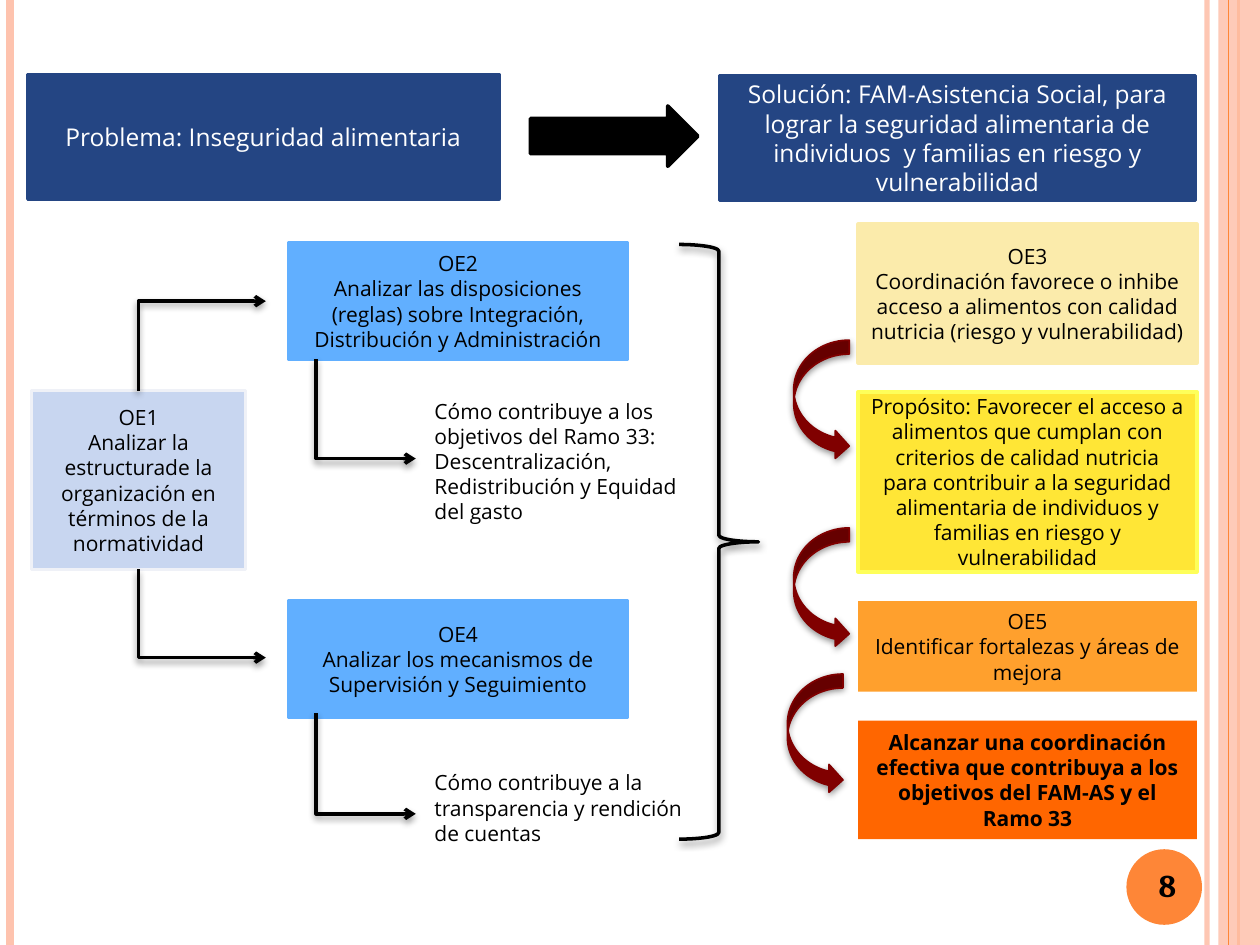
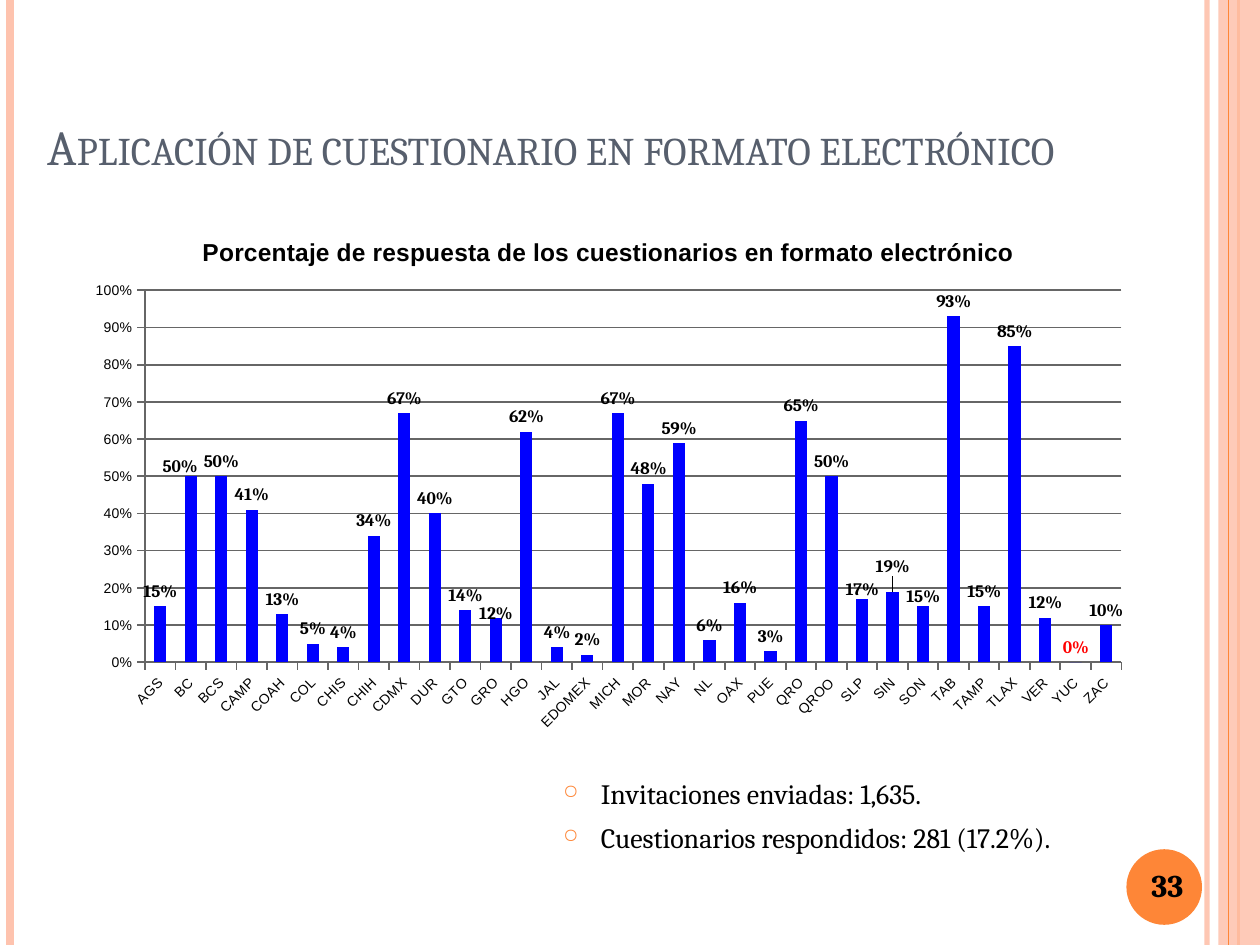
from lxml import etree
from pptx import Presentation
from pptx.chart.data import CategoryChartData
from pptx.dml.color import RGBColor
from pptx.enum.chart import XL_CHART_TYPE, XL_LABEL_POSITION, XL_TICK_MARK
from pptx.enum.shapes import MSO_CONNECTOR, MSO_SHAPE
from pptx.enum.text import MSO_ANCHOR, PP_ALIGN
from pptx.oxml.ns import qn
from pptx.util import Emu, Inches, Pt

RECT, OVAL = MSO_SHAPE.RECTANGLE, MSO_SHAPE.OVAL
STRAIGHT, ELBOW = MSO_CONNECTOR.STRAIGHT, MSO_CONNECTOR.ELBOW
LEFT, CENTER = PP_ALIGN.LEFT, PP_ALIGN.CENTER
TOP, MIDDLE, BOTTOM = MSO_ANCHOR.TOP, MSO_ANCHOR.MIDDLE, MSO_ANCHOR.BOTTOM
OUTSIDE_END = XL_LABEL_POSITION.OUTSIDE_END
TITLE_ONLY, BLANK = 5, 6

COLORS = {
    "black": "000000", "white": "FFFFFF", "orange": "FE8637", "peach": "FEC3AE",
    "slate": "575F6D", "navy": "244583", "sky": "61AFFF", "pale_blue": "C8D6F0",
    "ice": "EFF1F7", "cream": "FBEBAB", "yellow": "FFE636", "lemon": "FEFF5A",
    "amber": "FFA02D", "deep_orange": "FF6600", "maroon": "800000",
    "blue": "0000FF", "red": "FF0000", "grid": "666666",
}
SERIF, SANS, CHART_SANS = "Cambria", "Open Sans", "Arial"

STRIPES = [(9.58, "peach", 3, 93), (0.08, "peach", 4.5, 100), (9.83, "orange", 1.5, 100)]
INNER_STRIPE = (9.75, "orange", 0.75, 100)
SIDE_BAND = (9.67, 0, 0.33, 7.5)
NUMBER_DISC = (8.94, 6.74, 0.6, 0.6)

HEADERS = [
    ((5.71, 0.6, 3.78, 0.99),
     "Solución: FAM-Asistencia Social, para lograr la seguridad alimentaria de "
     "individuos  y familias en riesgo y vulnerabilidad"),
    ((0.22, 0.59, 3.74, 0.99), "Problema: Inseguridad alimentaria"),
]
SOLUTION_ARROW = (4.21, 0.84, 1.33, 0.48)

OBJECTIVES = [
    ((0.25, 3.1, 1.7, 1.42), "pale_blue", "ice",
     ["OE1", "Analizar la estructurade la", "organización en términos de la normatividad"]),
    ((2.29, 1.93, 2.69, 0.92), "sky", "sky",
     ["OE2", "Analizar las disposiciones (reglas) sobre Integración, "
             "Distribución y Administración"]),
    ((2.29, 4.77, 2.69, 0.92), "sky", "sky",
     ["OE4", "Analizar los mecanismos de Supervisión y Seguimiento"]),
]
CONTRIBUTIONS = [
    ((3.35, 3.12, 2.13, 1.08),
     "Cómo contribuye a los objetivos del Ramo 33: Descentralización, "
     "Redistribución y Equidad del gasto"),
    ((3.35, 5.95, 2.24, 0.92), "Cómo contribuye a la transparencia y rendición de cuentas"),
]
OUTCOME_LEFT, OUTCOME_WIDTH = 6.81, 2.69
OUTCOMES = [
    (1.78, 1.1, "cream", "cream", False,
     ["OE3", "Coordinación favorece o inhibe acceso a alimentos con calidad nutricia "
             "(riesgo y vulnerabilidad)"]),
    (3.11, 1.43, "yellow", "lemon", False,
     ["Propósito: Favorecer el acceso a alimentos que cumplan con criterios de calidad "
      "nutricia para contribuir a la seguridad alimentaria de individuos y familias en "
      "riesgo y vulnerabilidad"]),
    (4.77, 0.72, "amber", None, False, ["OE5", "Identificar fortalezas y áreas de mejora"]),
    (5.72, 0.94, "deep_orange", None, True,
     ["Alcanzar una coordinación efectiva que contribuya a los objetivos del FAM-AS y el "
      "Ramo 33"]),
]
ELBOWS = [
    ((1.1, 3.1), (2.11, 2.39)), ((1.1, 4.52), (2.11, 5.22)),
    ((2.51, 2.85), (3.3, 3.64)), ((2.51, 5.66), (3.3, 6.46)),
]
CURVED_ARROWS = [(6.3, 2.7), (6.3, 4.19), (6.25, 5.35)]
BRACE = (5.39, 1.94, 0.63, 4.72)

SURVEY_TITLE = "Aplicación de cuestionario en formato electrónico"
SURVEY_TOTALS = ["Invitaciones enviadas: 1,635.", "Cuestionarios respondidos: 281 (17.2%)."]
RESPONSE_TITLE = "Porcentaje de respuesta de los cuestionarios en formato electrónico"
RESPONSE_RATES = {
    "AGS": 0.15, "BC": 0.5, "BCS": 0.5, "CAMP": 0.41, "COAH": 0.13, "COL": 0.05,
    "CHIS": 0.04, "CHIH": 0.34, "CDMX": 0.67, "DUR": 0.4, "GTO": 0.14, "GRO": 0.12,
    "HGO": 0.62, "JAL": 0.04, "EDOMEX": 0.02, "MICH": 0.67, "MOR": 0.48, "NAY": 0.59,
    "NL": 0.06, "OAX": 0.16, "PUE": 0.03, "QRO": 0.65, "QROO": 0.5, "SLP": 0.17,
    "SIN": 0.19, "SON": 0.15, "TAB": 0.93, "TAMP": 0.15, "TLAX": 0.85, "VER": 0.12,
    "YUC": 0, "ZAC": 0.1,
}
LABEL_SHIFTS = {"BC": (-0.01, 0.01), "GRO": (0, 0.02), "SLP": (0, 0.01),
                "SIN": (0, -0.02), "SON": (0, 0.01)}
PLOT_AREA = {"x": 0.066, "y": 0.145, "w": 0.914, "h": 0.708}


def rgb(name):
    return RGBColor.from_string(COLORS[name])


def inches(values):
    return [Inches(value) for value in values]


def child(parent, tag, **attributes):
    return etree.SubElement(parent, qn(tag), {k: str(v) for k, v in attributes.items()})


def set_alpha(fill_parent, percent):
    if percent < 100:
        color = next(fill_parent.iter(qn("a:srgbClr")))
        child(color, "a:alpha", val=percent * 1000)


def set_effect(shape, opacity=None, blur=4, distance=2):
    properties = shape._element.spPr
    for old in properties.findall(qn("a:effectLst")):
        properties.remove(old)
    effects = child(properties, "a:effectLst")
    if opacity:
        shadow = child(effects, "a:outerShdw", blurRad=Pt(blur), dist=Pt(distance),
                       dir=90 * 60000, rotWithShape=0)
        child(child(shadow, "a:srgbClr", val=COLORS["black"]), "a:alpha", val=opacity * 1000)


def style_font(font, size, name, color="black", bold=False):
    font.size, font.name, font.bold = Pt(size), name, bold
    font.color.rgb = rgb(color)


def write(shape, texts, size, name, color="black", bold=False, align=CENTER, anchor=MIDDLE):
    frame = shape.text_frame
    frame.word_wrap = True
    frame.vertical_anchor = anchor
    frame.text = "\n".join(texts)
    for paragraph in frame.paragraphs:
        paragraph.alignment = align
        style_font(paragraph.font, size, name, color, bold)


def add_shape(slide, preset, box, fill=None, line=None, width=2.0):
    shape = slide.shapes.add_shape(preset, *inches(box))
    shape.shadow.inherit = False
    if fill:
        shape.fill.solid()
        shape.fill.fore_color.rgb = rgb(fill)
    else:
        shape.fill.background()
    if line:
        shape.line.color.rgb = rgb(line)
        shape.line.width = Pt(width)
    else:
        shape.line.fill.background()
    return shape


def add_line(slide, kind, start, end, color, width):
    line = slide.shapes.add_connector(kind, *inches(start + end))
    line.line.color.rgb = rgb(color)
    line.line.width = Pt(width)
    set_effect(line)
    return line


def add_stripe(slide, x, color, width, opacity):
    stripe = add_line(slide, STRAIGHT, (x, 0), (x, 7.5), color, width)
    set_alpha(stripe._element.spPr, opacity)


def add_frame(slide):
    add_shape(slide, OVAL, NUMBER_DISC, "orange")
    for stripe in STRIPES:
        add_stripe(slide, *stripe)
    band = add_shape(slide, RECT, SIDE_BAND, "peach")
    set_alpha(band._element.spPr, 87)
    add_stripe(slide, *INNER_STRIPE)


def add_number(slide, number):
    box = slide.shapes.add_textbox(*inches((8.94, 6.74, 0.65, 0.56)))
    write(box, [str(number)], 18, SERIF, bold=True)


def add_elbow(slide, source, target):
    elbow = add_line(slide, ELBOW, target, source, "black", 2)
    elbow._element.spPr.find(qn("a:prstGeom")).set("prst", "bentConnector2")
    child(elbow.line._get_or_add_ln(), "a:headEnd", type="arrow")
    set_effect(elbow, 40)


def build_objectives(slide):
    add_frame(slide)
    for box, text in HEADERS:
        write(add_shape(slide, RECT, box, "navy", "navy"), [text], 14, SANS, "white")
    arrow = add_shape(slide, MSO_SHAPE.RIGHT_ARROW, SOLUTION_ARROW, "black", "black")
    arrow.adjustments[0] = 0.58
    for box, fill, line, texts in OBJECTIVES:
        write(add_shape(slide, RECT, box, fill, line), texts, 12, SANS)
    for box, text in CONTRIBUTIONS:
        write(slide.shapes.add_textbox(*inches(box)), [text], 12, SANS, align=LEFT)
    for top, height, fill, line, bold, texts in OUTCOMES:
        box = (OUTCOME_LEFT, top, OUTCOME_WIDTH, height)
        write(add_shape(slide, RECT, box, fill, line), texts, 12, SANS, bold=bold)
    for source, target in ELBOWS:
        add_elbow(slide, source, target)
    for left, top in CURVED_ARROWS:
        curve = add_shape(slide, MSO_SHAPE.CURVED_RIGHT_ARROW, (left, top, 0.44, 0.95),
                          "maroon", "maroon", 1)
        set_effect(curve, 42, distance=1.6)
    add_number(slide, 8)
    set_effect(add_shape(slide, MSO_SHAPE.RIGHT_BRACE, BRACE, line="black"), 40)


def add_layout(layout, **places):
    manual = child(layout, "c:manualLayout")
    if "w" in places:
        child(manual, "c:layoutTarget", val="inner")
        for axis in "xy":
            child(manual, f"c:{axis}Mode", val="edge")
    for key, value in places.items():
        child(manual, f"c:{key}", val=value)


def style_axis(axis):
    axis.major_tick_mark = XL_TICK_MARK.OUTSIDE
    style_font(axis.tick_labels.font, 8, CHART_SANS)
    axis.format.line.color.rgb = rgb("grid")
    axis.format.line.width = Pt(1)


def add_response_chart(slide):
    data = CategoryChartData(number_format="0%")
    data.categories = list(RESPONSE_RATES)
    data.add_series("Series 1", list(RESPONSE_RATES.values()))
    chart = slide.shapes.add_chart(XL_CHART_TYPE.COLUMN_CLUSTERED,
                                   *inches((0.59, 1.7, 8.48, 4.17)), data).chart
    style_font(chart.font, 10, SERIF)
    chart.has_legend = False
    chart.has_title = True
    heading = chart.chart_title.text_frame
    heading.text = RESPONSE_TITLE
    style_font(heading.paragraphs[0].font, 14, CHART_SANS, bold=True)

    states, rates = chart.category_axis, chart.value_axis
    for axis in (states, rates):
        style_axis(axis)
    states._element.find(qn("c:txPr")).find(qn("a:bodyPr")).set("rot", str(-45 * 60000))
    rates.minimum_scale, rates.maximum_scale, rates.major_unit = 0, 1, 0.1
    rates.tick_labels.number_format = "0%"
    rates.tick_labels.number_format_is_linked = False
    rates.major_gridlines.format.line.color.rgb = rgb("grid")
    rates.major_gridlines.format.line.width = Pt(1)

    plot = chart.plots[0]
    plot.gap_width, plot.vary_by_categories = 150, False
    series = plot.series[0]
    series.format.fill.solid()
    series.format.fill.fore_color.rgb = rgb("blue")
    labels = series.data_labels
    labels.show_value = True
    labels.number_format, labels.number_format_is_linked = "0%", False
    labels.position = OUTSIDE_END
    style_font(labels.font, 10, SERIF, bold=True)
    order = list(RESPONSE_RATES)
    for state in [*LABEL_SHIFTS, "YUC"]:
        index = order.index(state)
        label = series.points[index].data_label
        style_font(label.font, 10, SERIF, "red" if state == "YUC" else "black", True)
        label.position = OUTSIDE_END
        if state in LABEL_SHIFTS:
            x, y = LABEL_SHIFTS[state]
            element = next(e for e in labels._element.findall(qn("c:dLbl"))
                           if e.find(qn("c:idx")).get("val") == str(index))
            layout = etree.Element(qn("c:layout"))
            add_layout(layout, x=x, y=y)
            element.insert(1, layout)

    area = chart._chartSpace.chart.plotArea
    for old in area.findall(qn("c:layout")):
        area.remove(old)
    layout = etree.Element(qn("c:layout"))
    add_layout(layout, **PLOT_AREA)
    area.insert(0, layout)


def build_survey(slide):
    add_frame(slide)
    title = slide.shapes.title
    title.left, title.top, title.width, title.height = inches((0.12, 0.44, 8.51, 1))
    write(title, [SURVEY_TITLE], 28, SERIF, "slate", anchor=BOTTOM)
    title.text_frame.paragraphs[0].runs[0]._r.get_or_add_rPr().set("cap", "small")

    totals = slide.shapes.add_textbox(*inches((4.37, 6.11, 4.65, 0.71)))
    totals.text_frame.text = "\n".join(SURVEY_TOTALS)
    for paragraph in totals.text_frame.paragraphs:
        properties = paragraph._p.get_or_add_pPr()
        properties.set("marL", str(Inches(0.3)))
        properties.set("indent", str(Emu(-Inches(0.3))))
        child(child(properties, "a:buClr"), "a:srgbClr", val=COLORS["orange"])
        child(properties, "a:buSzPct", val=70000)
        child(properties, "a:buChar", char="○")
        style_font(paragraph.font, 16, SERIF)
    totals.text_frame.paragraphs[1].space_before = Pt(6)
    totals.text_frame.word_wrap = True
    totals.text_frame.vertical_anchor = TOP
    add_number(slide, 33)
    add_response_chart(slide)


def main():
    deck = Presentation()
    deck.slide_width, deck.slide_height = Inches(10), Inches(7.5)
    build_objectives(deck.slides.add_slide(deck.slide_layouts[BLANK]))
    build_survey(deck.slides.add_slide(deck.slide_layouts[TITLE_ONLY]))
    deck.save("out.pptx")


if __name__ == "__main__":
    main()
